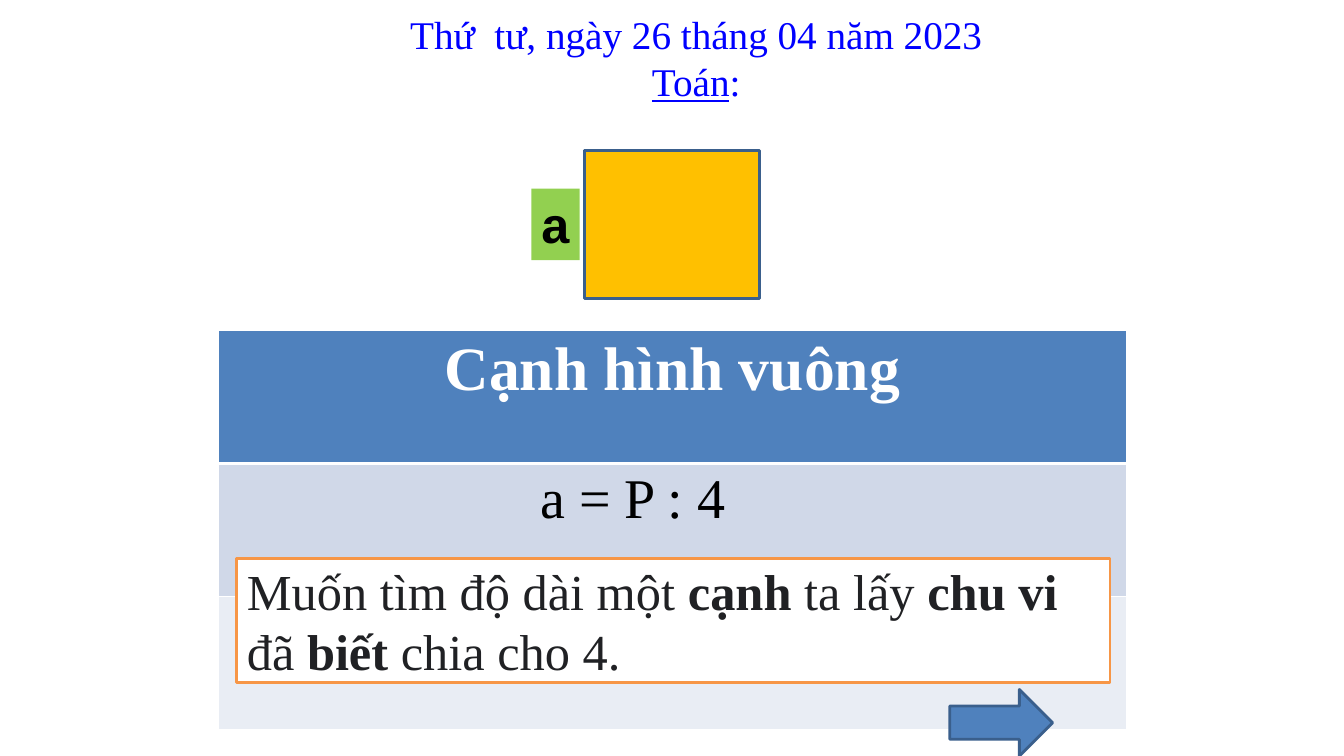
from dataclasses import dataclass
from typing import Optional

from lxml.etree import SubElement
from pptx import Presentation
from pptx.dml.color import RGBColor
from pptx.enum.shapes import MSO_SHAPE
from pptx.enum.text import MSO_ANCHOR, MSO_AUTO_SIZE, PP_ALIGN
from pptx.oxml.ns import qn
from pptx.util import Inches, Pt


@dataclass(frozen=True)
class Theme:
    """Colours, fonts and type sizes of the slide."""
    white: str = "FFFFFF"
    black: str = "000000"
    ink: str = "202124"
    date: str = "0000FF"
    blue: str = "4F81BD"
    edge: str = "3A5F8C"
    band: str = "D0D8E8"
    pale: str = "E9EDF4"
    gold: str = "FFC000"
    green: str = "92D050"
    orange: str = "F79646"
    serif: str = "Times New Roman"
    sans: str = "Arial"
    title: int = 28
    rule: int = 36
    sum: int = 40
    head: int = 44


@dataclass(frozen=True)
class Run:
    """A stretch of text with one look."""
    text: str
    bold: bool = False
    under: bool = False


@dataclass(frozen=True)
class Copy:
    """Paragraphs of runs that share a font, size and colour."""
    lines: tuple[tuple[Run, ...], ...]
    size: int
    color: str
    font: str
    align: PP_ALIGN = PP_ALIGN.LEFT


@dataclass(frozen=True)
class Box:
    """A shape or, without a kind, a text box."""
    place: tuple[float, float, float, float]
    kind: Optional[MSO_SHAPE] = None
    fill: Optional[str] = None
    line: Optional[str] = None
    copy: Optional[Copy] = None
    wrap: bool = True
    grow: bool = False


THEME = Theme()
TABLE = (2.17, 3.28, 9, 3.96)
HEAD = Copy(((Run("Cạnh hình vuông", bold=True),),),
            THEME.head, THEME.white, THEME.serif, PP_ALIGN.CENTER)
ROWS = ((THEME.blue, HEAD), (THEME.band, None), (THEME.pale, None))
RULE = (Run("Muốn tìm độ dài một "), Run("cạnh", bold=True), Run(" ta lấy "),
        Run("chu vi ", bold=True), Run("đã "), Run("biết", bold=True),
        Run(" chia cho 4."))
DATE = ((Run("Thứ  tư, ngày 26 tháng 04 năm 2023"),),
        (Run("Toán", under=True), Run(":")))
BOXES = (
    Box((5.8, 1.49, 1.73, 1.47), MSO_SHAPE.RECTANGLE, THEME.gold, THEME.edge),
    Box((5.27, 1.87, 0.48, 0.71), MSO_SHAPE.RECTANGLE, THEME.green,
        copy=Copy(((Run("a", bold=True),),), THEME.rule, THEME.black, THEME.sans),
        wrap=False, grow=True),
    Box((5.26, 4.54, 3.55, 0.77), grow=True,
        copy=Copy(((Run("a = P : 4"),),), THEME.sum, THEME.black, THEME.serif)),
    Box((2.35, 5.54, 8.66, 1.23), MSO_SHAPE.RECTANGLE, THEME.white, THEME.orange,
        Copy((RULE,), THEME.rule, THEME.ink, THEME.serif)),
    Box((9.42, 6.84, 1.02, 0.66), MSO_SHAPE.RIGHT_ARROW, THEME.blue, THEME.edge),
    Box((2.65, 0.05, 8.51, 1.04), grow=True,
        copy=Copy(DATE, THEME.title, THEME.date, THEME.serif, PP_ALIGN.CENTER)),
)


def paint(fill, color: str) -> None:
    """Give a fill one solid colour."""
    fill.solid()
    fill.fore_color.rgb = RGBColor.from_string(color)


def write(frame, copy: Copy) -> None:
    """Write the copy into a text frame, run by run."""
    for spot, line in enumerate(copy.lines):
        para = frame.add_paragraph() if spot else frame.paragraphs[0]
        para.alignment = copy.align
        for part in line:
            run = para.add_run()
            run.text = part.text
            font = run.font
            font.name, font.size = copy.font, Pt(copy.size)
            font.bold, font.underline = part.bold, part.under
            font.color.rgb = RGBColor.from_string(copy.color)


def border(cell, side: str, width: float) -> None:
    """Draw one white side of a cell."""
    edge = SubElement(cell._tc.get_or_add_tcPr(), qn(f"a:ln{side}"), w=str(Pt(width)))
    SubElement(SubElement(edge, qn("a:solidFill")), qn("a:srgbClr"), val=THEME.white)


def draw_table(slide) -> None:
    """Draw the table with its coloured rows."""
    table = slide.shapes.add_table(len(ROWS), 1, *map(Inches, TABLE)).table
    table.first_row = table.horz_banding = False
    for row, (color, copy) in enumerate(ROWS):
        cell = table.cell(row, 0)
        for side in "LRTB":
            thick = (row, side) in ((0, "B"), (1, "T"))
            border(cell, side, 3 if thick else 1)
        paint(cell.fill, color)
        if copy:
            write(cell.text_frame, copy)


def draw_box(slide, box: Box) -> None:
    """Draw a shape or text box with its text."""
    place = map(Inches, box.place)
    if box.kind is None:
        shape = slide.shapes.add_textbox(*place)
    else:
        shape = slide.shapes.add_shape(box.kind, *place)
        shape.shadow.inherit = False
        paint(shape.fill, box.fill)
        if box.line:
            paint(shape.line.fill, box.line)
            shape.line.width = Pt(2)
        else:
            shape.line.fill.background()
    if box.copy:
        frame = shape.text_frame
        frame.word_wrap = box.wrap
        frame.auto_size = MSO_AUTO_SIZE.SHAPE_TO_FIT_TEXT if box.grow else MSO_AUTO_SIZE.NONE
        frame.vertical_anchor = MSO_ANCHOR.TOP if box.grow else MSO_ANCHOR.MIDDLE
        write(frame, box.copy)


def main() -> None:
    """Build the slide and save it."""
    deck = Presentation()
    deck.slide_width, deck.slide_height = Inches(13.33), Inches(7.5)
    slide = deck.slides.add_slide(deck.slide_layouts[6])
    draw_table(slide)
    for box in BOXES:
        draw_box(slide, box)
    deck.save("out.pptx")


if __name__ == "__main__":
    main()
